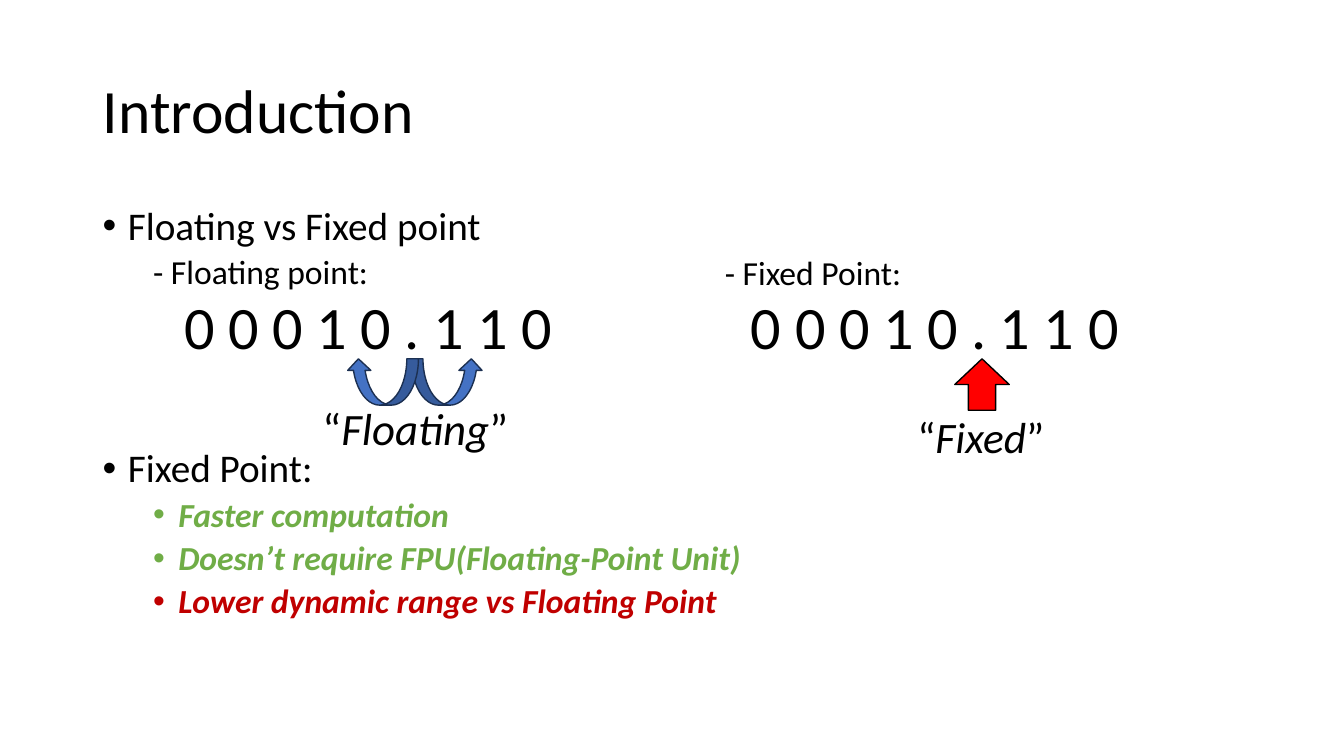
import pptx
import pptx.util
import pptx.dml.color
import pptx.enum.shapes
import pptx.enum.text
import pptx.oxml.ns
import lxml.etree

Inches = pptx.util.Inches
Pt = pptx.util.Pt
RGBColor = pptx.dml.color.RGBColor
Align = pptx.enum.text.PP_ALIGN
Kind = pptx.enum.shapes.MSO_SHAPE

BLACK = RGBColor(0, 0, 0)
GREEN = RGBColor(0x70, 0xAD, 0x47)
DARK_RED = RGBColor(0xC0, 0, 0)
RED = RGBColor(0xFF, 0, 0)
BLUE = RGBColor(0x44, 0x72, 0xC4)
NAVY = RGBColor(0x1C, 0x30, 0x52)


def add_run(para, text, size, color=BLACK, bold=False, italic=False):
    run = para.add_run()
    run.text = text
    run.font.name = "Calibri"
    run.font.size = Pt(size)
    run.font.color.rgb = color
    run.font.bold = bold
    run.font.italic = italic


def add_box(left, top, width, height, grow=False):
    frame = slide.shapes.add_textbox(
        Inches(left), Inches(top), Inches(width), Inches(height)).text_frame
    frame.word_wrap = True
    if grow:
        frame.auto_size = pptx.enum.text.MSO_AUTO_SIZE.SHAPE_TO_FIT_TEXT
    return frame


deck = pptx.Presentation()
deck.slide_width = Inches(13.33)
deck.slide_height = Inches(7.5)
slide = deck.slides.add_slide(deck.slide_layouts[5])

title = slide.shapes.title
title.left, title.top = Inches(0.92), Inches(0.4)
title.width, title.height = Inches(11.5), Inches(1.45)
title.text_frame.vertical_anchor = pptx.enum.text.MSO_ANCHOR.MIDDLE
para = title.text_frame.paragraphs[0]
para.alignment = Align.LEFT
para.line_spacing = 0.9
add_run(para, "Introduction", 44)

body = add_box(0.92, 2, 11.5, 4.76)
points = [
    ("Floating vs Fixed point", 0, True, 0, BLACK),
    ("- Floating point:", 1, False, 5, BLACK),
    ("Fixed Point:", 0, True, 112, BLACK),
    ("Faster computation", 1, True, 5, GREEN),
    ("Doesn’t require FPU(Floating-Point Unit)", 1, True, 5, GREEN),
    ("Lower dynamic range vs Floating Point", 1, True, 5, DARK_RED),
]
for i, (text, level, dot, gap, color) in enumerate(points):
    para = body.add_paragraph() if i else body.paragraphs[0]
    para.level = level
    para.line_spacing = 0.9
    para.space_before = Pt(gap)
    strong = color != BLACK
    add_run(para, text, 24 if level else 28, color, strong, strong)
    props = para._p.get_or_add_pPr()
    hang = 0.25 if dot else 0
    props.set("marL", str(Inches(0.5 * level + hang)))
    props.set("indent", str(Inches(-hang)))
    if dot:
        qn = pptx.oxml.ns.qn
        tint = lxml.etree.SubElement(props, qn("a:buClr"))
        lxml.etree.SubElement(tint, qn("a:srgbClr")).set("val", str(color))
        lxml.etree.SubElement(props, qn("a:buFont")).set("typeface", "Arial")
        lxml.etree.SubElement(props, qn("a:buChar")).set("char", "•")

para = add_box(7.09, 2.5, 4, 0.46).paragraphs[0]
para.line_spacing = 0.9
add_run(para, "- Fixed Point:", 24)

for left in (1.73, 7.35):
    para = add_box(left, 2.82, 3.92, 0.82, True).paragraphs[0]
    para.alignment = Align.JUSTIFY
    add_run(para, "0 0 0 1 0 . 1 1 0", 43)

arrows = [
    (Kind.CURVED_UP_ARROW, 4.08, 0.71, 0.46, BLUE, NAVY, False),
    (Kind.CURVED_UP_ARROW, 3.44, 0.71, 0.46, BLUE, NAVY, True),
    (Kind.UP_ARROW, 9.47, 0.54, 0.51, RED, BLACK, False),
]
for kind, left, width, height, fill, line, flip in arrows:
    arrow = slide.shapes.add_shape(
        kind, Inches(left), Inches(3.56), Inches(width), Inches(height))
    arrow.shadow.inherit = False
    arrow.fill.solid()
    arrow.fill.fore_color.rgb = fill
    arrow.line.color.rgb = line
    arrow.line.width = Pt(1)
    if flip:
        arrow._element.spPr.xfrm.set("flipH", "1")

labels = [
    ("Floating", 3.1, 3.93, 2.08, 0.64, 32),
    ("Fixed", 9, 4.02, 1.71, 0.62, 31),
]
for word, left, top, width, height, size in labels:
    para = add_box(left, top, width, height, True).paragraphs[0]
    add_run(para, "“", size)
    add_run(para, word, size, italic=True)
    add_run(para, "”", size)

deck.save("out.pptx")
